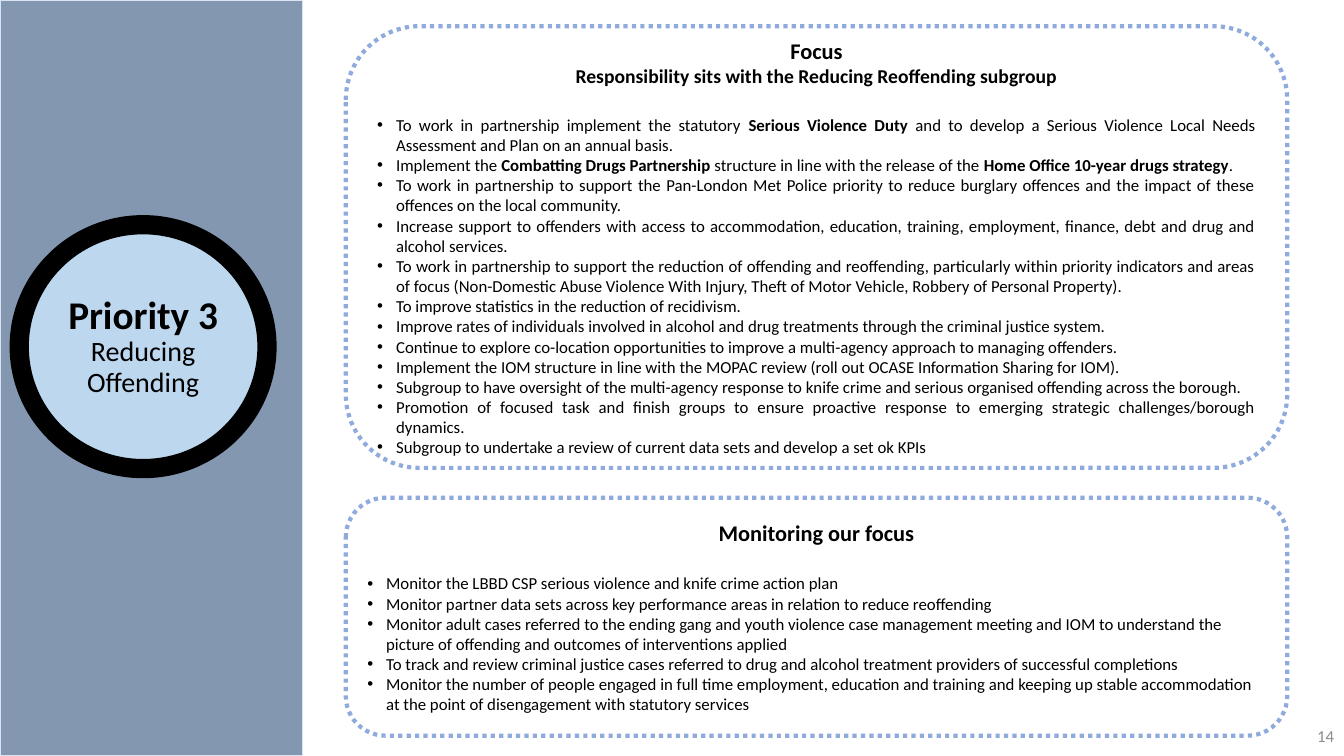
from lxml import etree
from pptx import Presentation
from pptx.dml.color import RGBColor
from pptx.enum.dml import MSO_LINE
from pptx.enum.shapes import MSO_SHAPE as SHAPE
from pptx.enum.text import MSO_ANCHOR as ANCHOR, MSO_AUTO_SIZE as AUTO, PP_ALIGN as ALIGN
from pptx.oxml.ns import qn
from pptx.util import Pt

FONT = "Calibri"
HANG = 13.5
HEADING_GAP = 19.5
PANEL_X, PANEL_W = 247, 672.5

FOCUS_HEADINGS = [("Focus", 16), ("Responsibility sits with the Reducing Reoffending subgroup", 14)]
FOCUS = [
    "To work in partnership implement the statutory **Serious Violence Duty **and to develop a Serious Violence Local Needs Assessment and Plan on an annual basis. ",
    "Implement the **Combatting Drugs Partnership **structure in line with the release of the **Home Office 10-year drugs strategy**.",
    "To work in partnership to support the Pan-London Met Police priority to reduce burglary offences and the impact of these offences on the local community. ",
    "Increase support to offenders with access to accommodation, education, training, employment, finance, debt and drug and alcohol services.",
    "To work in partnership to support the reduction of offending and reoffending, particularly within priority indicators and areas of focus (Non-Domestic Abuse Violence With Injury, Theft of Motor Vehicle, Robbery of Personal Property).",
    "To improve statistics in the reduction of recidivism.",
    "Improve rates of individuals involved in alcohol and drug treatments through the criminal justice system.",
    "Continue to explore co-location opportunities to improve a multi-agency approach to managing offenders. ",
    "Implement the IOM structure in line with the MOPAC review (roll out OCASE Information Sharing for IOM).",
    "Subgroup to have oversight of the multi-agency response to knife crime and serious organised offending across the borough. ",
    "Promotion of focused task and finish groups to ensure proactive response to emerging strategic challenges/borough dynamics.",
    "Subgroup to undertake a review of current data sets and develop a set ok KPIs",
]
MONITORING_HEADINGS = [("Monitoring our focus", 16)]
MONITORING = [
    "Monitor the LBBD CSP serious violence and knife crime action plan",
    "Monitor partner data sets across key performance areas in relation to reduce reoffending",
    "Monitor adult cases referred to the ending gang and youth violence case management meeting and IOM to understand the picture of offending and outcomes of interventions applied",
    "To track and review criminal justice cases referred to drug and alcohol treatment providers of successful completions",
    "Monitor the number of people engaged in full time employment, education and training and keeping up stable accommodation at the point of disengagement with statutory services",
]


def rgb(value):
    return RGBColor.from_string(value)


def set_attrs(obj, **values):
    for name, value in values.items():
        setattr(obj, name, value)


def add_shape(slide, kind, x, y, w, h, fill, line, width):
    sp = slide.shapes.add_shape(kind, Pt(x), Pt(y), Pt(w), Pt(h))
    sp.shadow.inherit = False
    sp.fill.solid()
    sp.fill.fore_color.rgb = rgb(fill)
    sp.line.color.rgb = rgb(line)
    sp.line.width = Pt(width)
    return sp


def add_run(p, text, size, bold=False, color="000000"):
    r = p.add_run()
    r.text = text
    set_attrs(r.font, name=FONT, size=Pt(size), bold=bold)
    r.font.color.rgb = rgb(color)


def next_paragraph(tf, **values):
    """Return the empty first paragraph, or a new one."""
    p = tf.add_paragraph() if tf.paragraphs[0].runs else tf.paragraphs[0]
    set_attrs(p, **values)
    return p


def add_bullet(tf, text, align, gap):
    """Add a 12 pt bullet; text between ** marks is bold."""
    p = next_paragraph(tf, alignment=align, space_before=Pt(gap))
    pPr = p._p.get_or_add_pPr()
    pPr.set("marL", str(Pt(HANG)))
    pPr.set("indent", str(-Pt(HANG)))
    etree.SubElement(pPr, qn("a:buFont"), typeface="Arial")
    etree.SubElement(pPr, qn("a:buChar"), char="•")
    for i, part in enumerate(text.split("**")):
        add_run(p, part, 12, bold=i % 2 == 1)


def add_panel(slide, y, h, headings, bullets, align):
    sp = add_shape(slide, SHAPE.ROUNDED_RECTANGLE, PANEL_X, y, PANEL_W, h, "FFFFFF", "8FAADC", 3)
    sp.line.dash_style = MSO_LINE.ROUND_DOT
    tf = sp.text_frame
    set_attrs(tf, word_wrap=True, vertical_anchor=ANCHOR.MIDDLE)
    for text, size in headings:
        add_run(next_paragraph(tf, alignment=ALIGN.CENTER), text, size, bold=True)
    for i, text in enumerate(bullets):
        add_bullet(tf, text, align, 0 if i else HEADING_GAP)


def add_priority_badge(slide, x, y, w, h):
    """Draw the ringed circle and lay the slide title over its middle."""
    add_shape(slide, SHAPE.OVAL, x, y, w, h, "BDD7EE", "000000", 13.75)
    title = slide.shapes.title
    inset = 0.15 * w
    set_attrs(title, left=Pt(x + inset), top=Pt(y + inset),
              width=Pt(w - 2 * inset), height=Pt(h - 2 * inset))
    title.element.getparent().append(title.element)
    tf = title.text_frame
    set_attrs(tf, word_wrap=True, auto_size=AUTO.NONE, vertical_anchor=ANCHOR.MIDDLE)
    for text, size, bold in (("Priority 3", 28, True), ("Reducing Offending", 20, False)):
        p = next_paragraph(tf, alignment=ALIGN.CENTER, line_spacing=0.9, space_before=Pt(0))
        add_run(p, text, size, bold)


def add_page_number(slide, x, y, w, h):
    tf = slide.shapes.add_textbox(Pt(x), Pt(y), Pt(w), Pt(h)).text_frame
    set_attrs(tf, word_wrap=True, vertical_anchor=ANCHOR.MIDDLE)
    add_run(next_paragraph(tf, alignment=ALIGN.RIGHT), "14", 12, color="8C8C8C")


def main():
    prs = Presentation()
    set_attrs(prs, slide_width=Pt(960), slide_height=Pt(540))
    slide = prs.slides.add_slide(prs.slide_layouts[5])
    add_shape(slide, SHAPE.RECTANGLE, 0, 0, 216, 540, "8497B0", "DAE3F3", 1)
    add_page_number(slide, 744, 511.5, 216, 28.75)
    add_panel(slide, 355.5, 170, MONITORING_HEADINGS, MONITORING, ALIGN.LEFT)
    add_panel(slide, 18.75, 315.5, FOCUS_HEADINGS, FOCUS, ALIGN.JUSTIFY)
    add_priority_badge(slide, 13.75, 160.5, 177, 174.25)
    prs.save("out.pptx")


if __name__ == "__main__":
    main()
